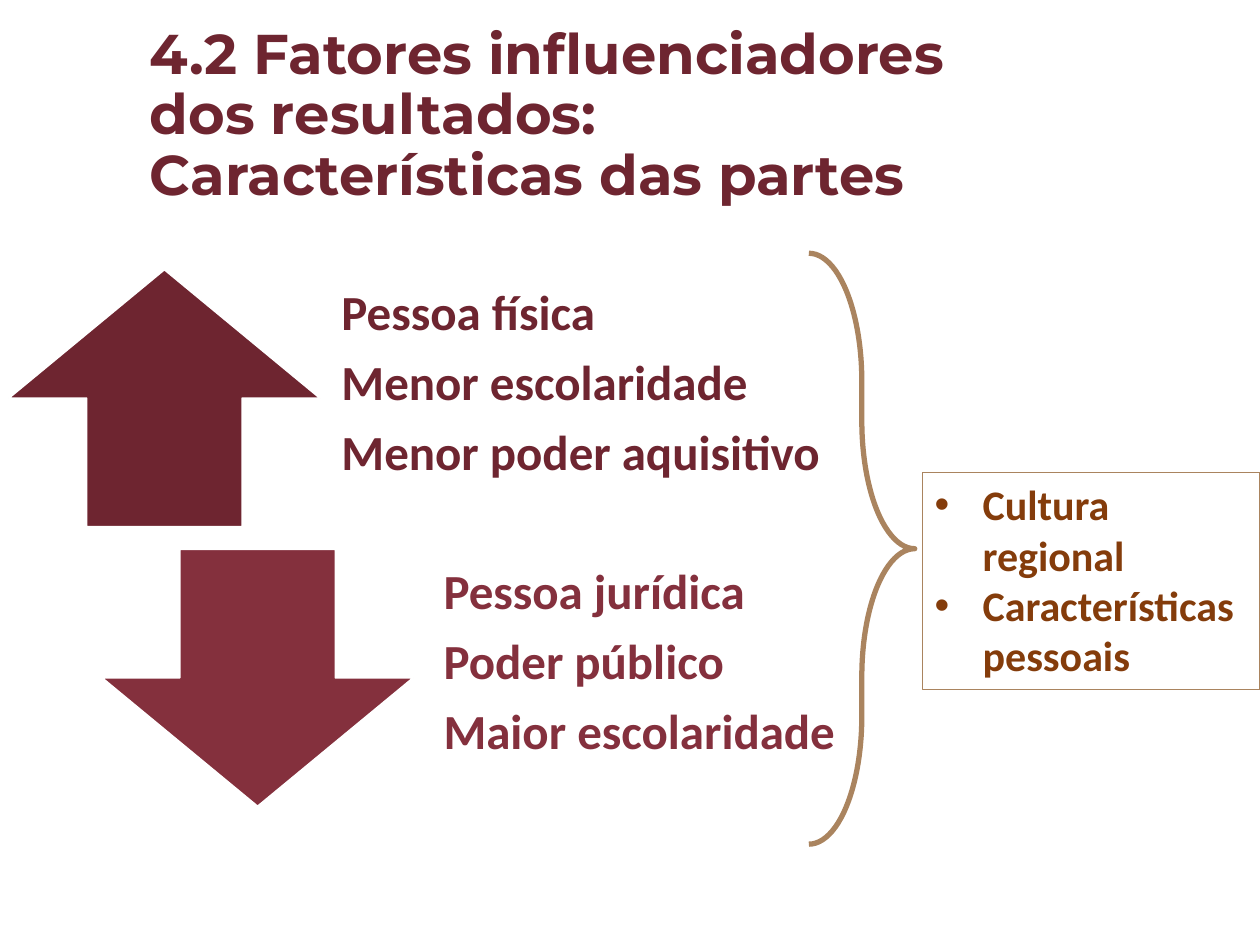
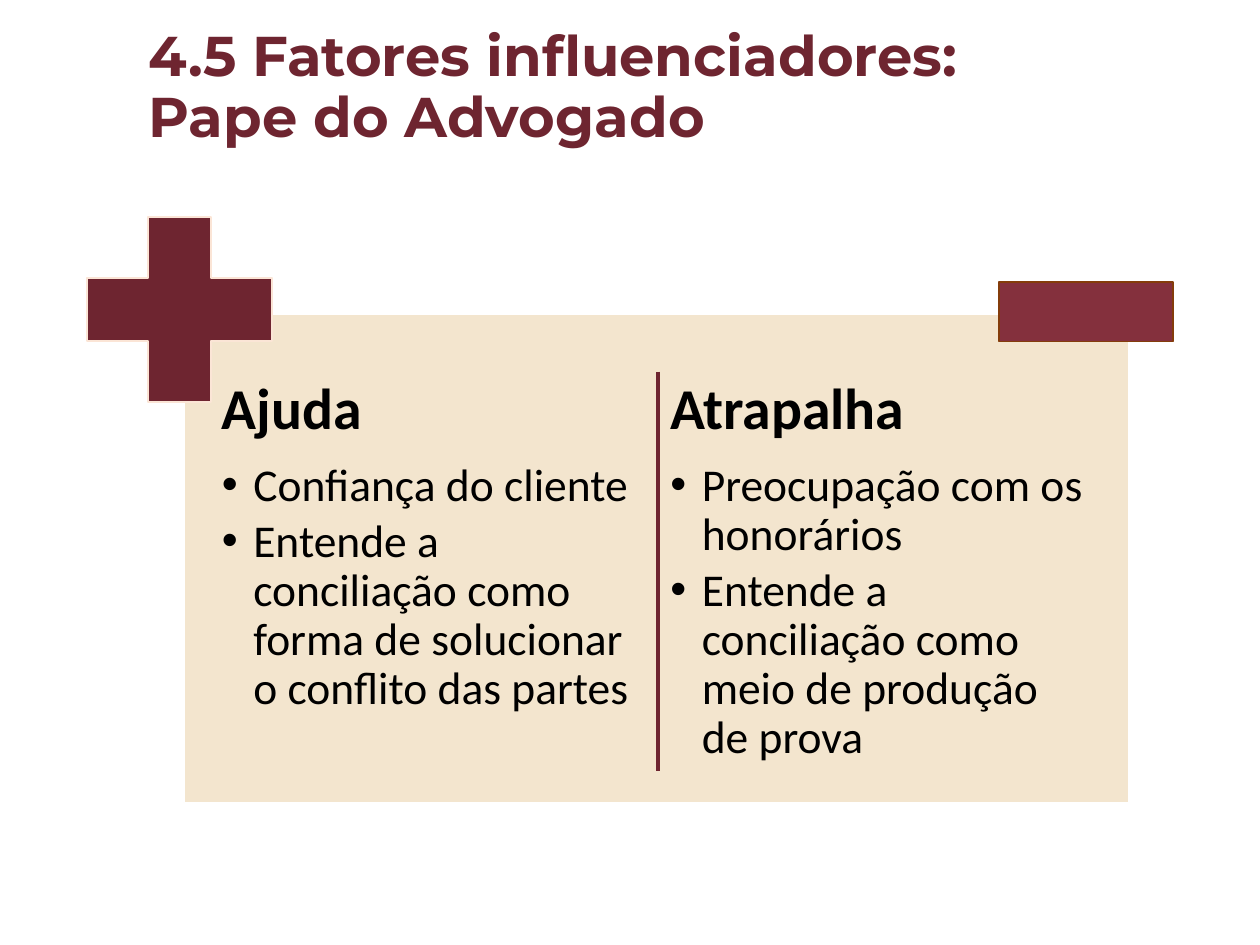
from dataclasses import dataclass

import pptx
import pptx.dml.color
import pptx.enum.shapes
import pptx.enum.text
import pptx.oxml
import pptx.oxml.ns
import pptx.util
from pptx.util import Inches, Pt

SHAPES = pptx.enum.shapes.MSO_SHAPE
ANCHOR = pptx.enum.text.MSO_ANCHOR
FIT = pptx.enum.text.MSO_AUTO_SIZE
ALIGN = pptx.enum.text.PP_ALIGN

WINE, ROSE, SAND, TAN = "6E2530", "84303D", "F3E5CE", "AA845F"
BROWN, PEACH, WHITE, BLACK = "843C0B", "FBE5D6", "FFFFFF", "000000"


@dataclass(frozen=True)
class Area:
    left: float
    top: float
    width: float
    height: float

    def lengths(self) -> tuple:
        return tuple(Inches(n) for n in (self.left, self.top, self.width, self.height))


@dataclass(frozen=True)
class TextStyle:
    size: float
    color: str
    bold: bool = True
    font: str = "Calibri"
    spacing: float = 0.9
    after: float = 0
    indent: float = 0


@dataclass(frozen=True)
class Figure:
    kind: SHAPES
    area: Area
    fill: str | None
    line: str
    line_width: float = 1
    adjustments: tuple[float, ...] = ()


@dataclass(frozen=True)
class PartyGroup:
    arrow: Figure
    text_area: Area
    lines: tuple[str, ...]


@dataclass(frozen=True)
class Column:
    left: float
    heading: str
    points: tuple[str, ...]


TITLE = TextStyle(32, WINE, font="Montserrat")
HEADING = TextStyle(33, BLACK, after=11.55)
POINT = TextStyle(26, BLACK, bold=False, after=3.9, indent=0.25)
CULTURE = TextStyle(24, BROWN, spacing=1, indent=0.38)
PARTY_INSETS = (0.22, 0, 0.22, 0.22)
COLUMN_INSETS = (0.07,) * 4

PARTIES = (
    PartyGroup(
        Figure(SHAPES.UP_ARROW, Area(0.07, 2.14, 2.47, 2.04), WINE, WHITE),
        Area(2.49, 2.14, 4.91, 2.04),
        ("Pessoa física", "Menor escolaridade", "Menor poder aquisitivo"),
    ),
    PartyGroup(
        Figure(SHAPES.DOWN_ARROW, Area(0.81, 4.36, 2.47, 2.04), ROSE, WHITE),
        Area(3.3, 4.36, 4.19, 2.04),
        ("Pessoa jurídica", "Poder público", "Maior escolaridade"),
    ),
)
BRACE = Figure(SHAPES.RIGHT_BRACE, Area(6.42, 2.01, 0.84, 4.69), None, TAN, 3, (1.21, 0.5))
CULTURE_BOX = Figure(SHAPES.RECTANGLE, Area(7.32, 3.75, 2.68, 1.72), None, TAN, 0.75)

PANEL = Figure(SHAPES.RECTANGLE, Area(1.46, 2.49, 7.5, 3.88), SAND, WHITE)
SIGNS = (
    Figure(SHAPES.CROSS, Area(0.69, 1.72, 1.47, 1.47), WINE, PEACH, 1, (0.33,)),
    Figure(SHAPES.RECTANGLE, Area(7.93, 2.24, 1.38, 0.47), ROSE, BROWN),
)
COLUMNS = (
    Column(1.69, "Ajuda", (
        "Confiança do cliente",
        "Entende a conciliação como forma de solucionar o conflito das partes",
    )),
    Column(5.25, "Atrapalha", (
        "Preocupação com os honorários",
        "Entende a conciliação como meio de produção de prova",
    )),
)


def color(value: str) -> pptx.dml.color.RGBColor:
    return pptx.dml.color.RGBColor.from_string(value)


def assign(target, values: dict) -> None:
    for name, value in values.items():
        setattr(target, name, value)


def add_bullet(para, indent: float) -> None:
    properties = para._p.get_or_add_pPr()
    properties.set("marL", str(Inches(indent)))
    properties.set("indent", str(-Inches(indent)))
    namespace = pptx.oxml.ns.nsdecls("a")
    for xml in (f'<a:buFont {namespace} typeface="Arial"/>', f'<a:buChar {namespace} char="•"/>'):
        properties.append(pptx.oxml.parse_xml(xml))


def write(frame, items: list[tuple[str, TextStyle]], anchor=ANCHOR.TOP,
          insets: tuple[float, ...] = (0.1, 0.05, 0.1, 0.05),
          wrap: bool = True, fit=FIT.NONE) -> None:
    assign(frame, {"word_wrap": wrap, "auto_size": fit, "vertical_anchor": anchor})
    sides = ("left", "top", "right", "bottom")
    assign(frame, {f"margin_{side}": Inches(n) for side, n in zip(sides, insets)})
    for index, (text, style) in enumerate(items):
        para = frame.add_paragraph() if index else frame.paragraphs[0]
        para.text = text
        assign(para, {"alignment": ALIGN.LEFT, "line_spacing": style.spacing,
                      "space_before": Pt(0), "space_after": Pt(style.after)})
        if style.indent:
            add_bullet(para, style.indent)
        for span in para.runs:
            assign(span.font, {"name": style.font, "size": Pt(style.size), "bold": style.bold})
            span.font.color.rgb = color(style.color)


def draw_figure(page, figure: Figure):
    shape = page.shapes.add_shape(figure.kind, *figure.area.lengths())
    shape.shadow.inherit = False
    if figure.fill:
        shape.fill.solid()
        shape.fill.fore_color.rgb = color(figure.fill)
    else:
        shape.fill.background()
    shape.line.color.rgb = color(figure.line)
    shape.line.width = Pt(figure.line_width)
    for index, value in enumerate(figure.adjustments):
        shape.adjustments[index] = value
    return shape


def draw_text(page, area: Area, items: list[tuple[str, TextStyle]], **options) -> None:
    write(page.shapes.add_textbox(*area.lengths()).text_frame, items, **options)


def draw_divider(page, x: float, top: float, bottom: float) -> None:
    divider = page.shapes.add_connector(
        pptx.enum.shapes.MSO_CONNECTOR.STRAIGHT,
        Inches(x), Inches(top), Inches(x), Inches(bottom))
    divider.line.color.rgb = color(WINE)
    divider.line.width = Pt(2.25)
    namespace = pptx.oxml.ns.nsdecls("a")
    divider._element.spPr.append(pptx.oxml.parse_xml(f"<a:effectLst {namespace}/>"))


def add_page(deck, area: Area, *paragraphs: str):
    page = deck.slides.add_slide(deck.slide_layouts[5])
    title = page.shapes.title
    assign(title, dict(zip(("left", "top", "width", "height"), area.lengths())))
    write(title.text_frame, [(text, TITLE) for text in paragraphs], anchor=ANCHOR.MIDDLE)
    return page


def build_parties(deck) -> None:
    page = add_page(deck, Area(1.09, 0.23, 8.62, 1.39),
                    "4.2 Fatores influenciadores\vdos resultados:",
                    "Características das partes")
    for party in PARTIES:
        draw_figure(page, party.arrow)
        style = TextStyle(28, party.arrow.fill, after=9.8)
        draw_text(page, party.text_area, [(line, style) for line in party.lines],
                  anchor=ANCHOR.MIDDLE, insets=PARTY_INSETS)
    draw_figure(page, BRACE)
    culture = draw_figure(page, CULTURE_BOX)
    write(culture.text_frame,
          [("Cultura\vregional", CULTURE), ("Características\vpessoais", CULTURE)],
          wrap=False, fit=FIT.SHAPE_TO_FIT_TEXT)


def build_lawyer(deck) -> None:
    page = add_page(deck, Area(1.08, -0.02, 8.62, 1.45),
                    "4.5 Fatores influenciadores:\vPape do Advogado")
    draw_figure(page, PANEL)
    for column in COLUMNS:
        items = [(column.heading, HEADING)] + [(point, POINT) for point in column.points]
        draw_text(page, Area(column.left, 2.94, 3.48, 3.32), items, insets=COLUMN_INSETS)
    for sign in SIGNS:
        draw_figure(page, sign)
    draw_divider(page, 5.22, 2.95, 6.12)


def main() -> None:
    deck = pptx.Presentation()
    deck.slide_width, deck.slide_height = Inches(10), Inches(7.5)
    build_parties(deck)
    build_lawyer(deck)
    deck.save("out.pptx")


if __name__ == "__main__":
    main()
